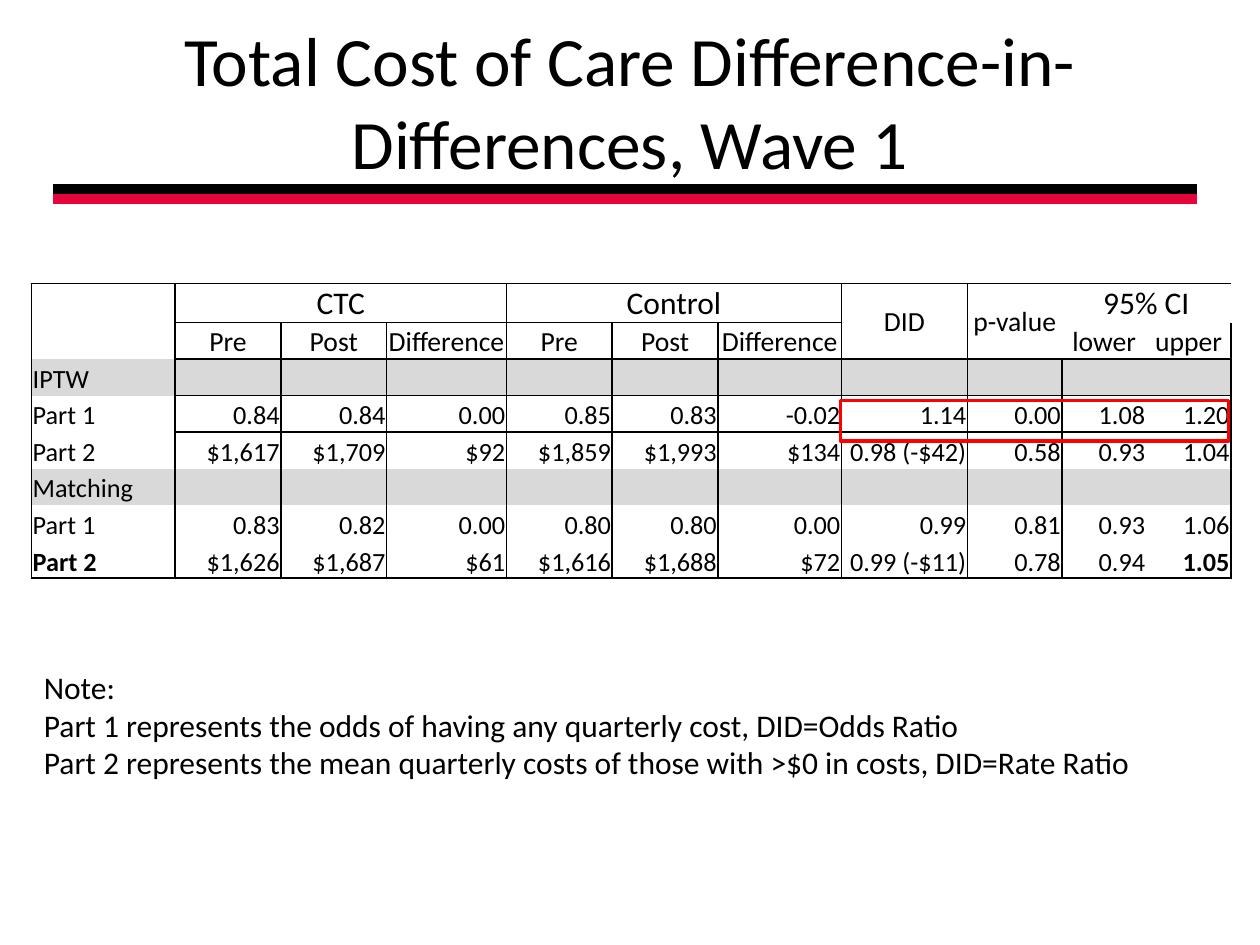
import lxml.etree
import pptx
import pptx.dml.color
import pptx.enum.shapes
import pptx.enum.text
import pptx.oxml.ns
import pptx.util

Inches = pptx.util.Inches
Pt = pptx.util.Pt
Align = pptx.enum.text.PP_ALIGN
Anchor = pptx.enum.text.MSO_ANCHOR
qn = pptx.oxml.ns.qn

COLORS = {"ink": "000000", "paper": "FFFFFF", "band": "D9D9D9",
          "rule": "E5053A", "highlight": "FF0000"}
FONT = "Calibri"
NO_STYLE = "{2D5ABB26-0587-4C30-8999-92F81FD0307C}"
COLUMN_WIDTHS = [1.14, 0.84, 0.84, 0.95, 0.84, 0.84, 0.98, 1, 0.75, 0.67, 0.67]
ROW_HEIGHT = 0.29
ROWS = [
    ["", "CTC", "", "", "Control", "", "", "DID", "p-value", "95% CI", ""],
    ["", "Pre", "Post", "Difference", "Pre", "Post", "Difference", "", "", "lower", "upper"],
    ["IPTW"] + [""] * 10,
    ["Part 1", "0.84", "0.84", "0.00", "0.85", "0.83", "-0.02", "1.14", "0.00", "1.08", "1.20"],
    ["Part 2", "$1,617", "$1,709", "$92", "$1,859", "$1,993", "$134", "0.98 (-$42)", "0.58",
     "0.93", "1.04"],
    ["Matching"] + [""] * 10,
    ["Part 1", "0.83", "0.82", "0.00", "0.80", "0.80", "0.00", "0.99", "0.81", "0.93", "1.06"],
    ["Part 2", "$1,626", "$1,687", "$61", "$1,616", "$1,688", "$72", "0.99 (-$11)", "0.78",
     "0.94", "1.05"],
]
MERGES = [(0, 1, 0, 3), (0, 4, 0, 6), (0, 7, 1, 7), (0, 8, 1, 8), (0, 9, 0, 10)]
GROUP_EDGES = {0, 1, 4, 7, 8, 11}
PRE_EDGES = {2, 5}
RULED_COLUMNS = {0: range(11), 1: range(1, 7), 2: range(1, 11), 3: range(1, 11), 8: range(11)}


def rgb(name):
    """Return the named colour."""
    return pptx.dml.color.RGBColor.from_string(COLORS[name])


def style_paragraph(paragraph, size, align=Align.LEFT, bold=False):
    """Set the alignment and font of a paragraph."""
    paragraph.alignment = align
    paragraph.font.name = FONT
    paragraph.font.size = Pt(size)
    paragraph.font.bold = bold
    paragraph.font.color.rgb = rgb("ink")


def add_text(slide, box, lines, size, align=Align.LEFT, anchor=Anchor.TOP):
    """Place lines of wrapped text in the box."""
    shape = slide.shapes.add_textbox(*map(Inches, box))
    frame = shape.text_frame
    frame.word_wrap = True
    frame.vertical_anchor = anchor
    frame.text = "\n".join(lines)
    for paragraph in frame.paragraphs:
        style_paragraph(paragraph, size, align)


def add_header_rules(slide, box):
    """Draw the two thick rules along the top and bottom of the box."""
    left, top, width, height = box
    for y, color in ((top, "ink"), (top + height, "rule")):
        line = slide.shapes.add_connector(
            pptx.enum.shapes.MSO_CONNECTOR.STRAIGHT,
            Inches(left), Inches(y), Inches(left + width), Inches(y))
        line.line.color.rgb = rgb(color)
        line.line.width = Pt(6)
        lxml.etree.SubElement(line._element.spPr, qn("a:effectLst"))


def has_vertical(row, edge):
    """Tell whether a vertical border stands at the column edge."""
    return edge in GROUP_EDGES or (row > 0 and edge in PRE_EDGES)


def has_horizontal(edge, column):
    """Tell whether a horizontal border runs along the row edge."""
    return column in RULED_COLUMNS.get(edge, ())


def set_borders(cell, row, column):
    """Add the borders that the table rules give to a cell."""
    sides = {"L": has_vertical(row, column), "R": has_vertical(row, column + 1),
             "T": has_horizontal(row, column), "B": has_horizontal(row + 1, column)}
    properties = cell._tc.get_or_add_tcPr()
    for side, drawn in sides.items():
        if drawn:
            border = lxml.etree.SubElement(properties, qn(f"a:ln{side}"), w=str(Pt(1)))
            fill = lxml.etree.SubElement(border, qn("a:solidFill"))
            lxml.etree.SubElement(fill, qn("a:srgbClr"), val=COLORS["ink"])


def fill_cell(cell, row, column, text):
    """Write and format one table cell."""
    cell.margin_left = cell.margin_right = cell.margin_top = Inches(0.01)
    cell.margin_bottom = 0
    spans_rows = row == 0 and column in (7, 8)
    cell.vertical_anchor = Anchor.MIDDLE if spans_rows else Anchor.BOTTOM
    set_borders(cell, row, column)
    cell.fill.solid()
    cell.fill.fore_color.rgb = rgb("band" if row in (2, 5) else "paper")
    if row < 2:
        size = 18 if row == 0 and text and not spans_rows else 15.8
        align = Align.CENTER
    else:
        size = 15
        align = Align.RIGHT if column else Align.LEFT
    cell.text_frame.text = text
    bold = row == len(ROWS) - 1 and column in (0, len(COLUMN_WIDTHS) - 1)
    style_paragraph(cell.text_frame.paragraphs[0], size, align, bold)


def add_cost_table(slide, box):
    """Place the cost table in the box."""
    frame = slide.shapes.add_table(len(ROWS), len(COLUMN_WIDTHS), *map(Inches, box))
    table = frame.table
    table.first_row = table.horz_banding = False
    table._tbl.tblPr.find(qn("a:tableStyleId")).text = NO_STYLE
    for column, width in zip(table.columns, COLUMN_WIDTHS):
        column.width = Inches(width)
    for row in table.rows:
        row.height = Inches(ROW_HEIGHT)
    for row, texts in enumerate(ROWS):
        for column, text in enumerate(texts):
            fill_cell(table.cell(row, column), row, column, text)
    for top, left, bottom, right in MERGES:
        table.cell(top, left).merge(table.cell(bottom, right))


def add_highlight(slide, box):
    """Outline the box in red."""
    shape = slide.shapes.add_shape(
        pptx.enum.shapes.MSO_SHAPE.RECTANGLE, *map(Inches, box))
    shape.shadow.inherit = False
    shape.fill.background()
    shape.line.color.rgb = rgb("highlight")
    shape.line.width = Pt(2)


def main():
    """Build and save the slide."""
    presentation = pptx.Presentation()
    presentation.slide_width = Inches(10)
    presentation.slide_height = Inches(7.5)
    slide = presentation.slides.add_slide(presentation.slide_layouts[6])
    add_header_rules(slide, (0.42, 1.5, 9.08, 0.08))
    add_text(slide, (0.5, 0.17, 9, 1.25),
             ["Total Cost of Care Difference-in- Differences, Wave 1"],
             39.6, Align.CENTER, Anchor.MIDDLE)
    add_cost_table(slide, (0.25, 2.25, 9.5, 2.37))
    add_text(slide, (0.25, 5.25, 9.33, 1.01), [
        "Note:",
        "Part 1 represents the odds of having any quarterly cost, DID=Odds Ratio",
        "Part 2 represents the mean quarterly costs of those with >$0 in costs, DID=Rate Ratio",
    ], 18)
    add_highlight(slide, (6.67, 3.18, 3.08, 0.32))
    presentation.save("out.pptx")


if __name__ == "__main__":
    main()
